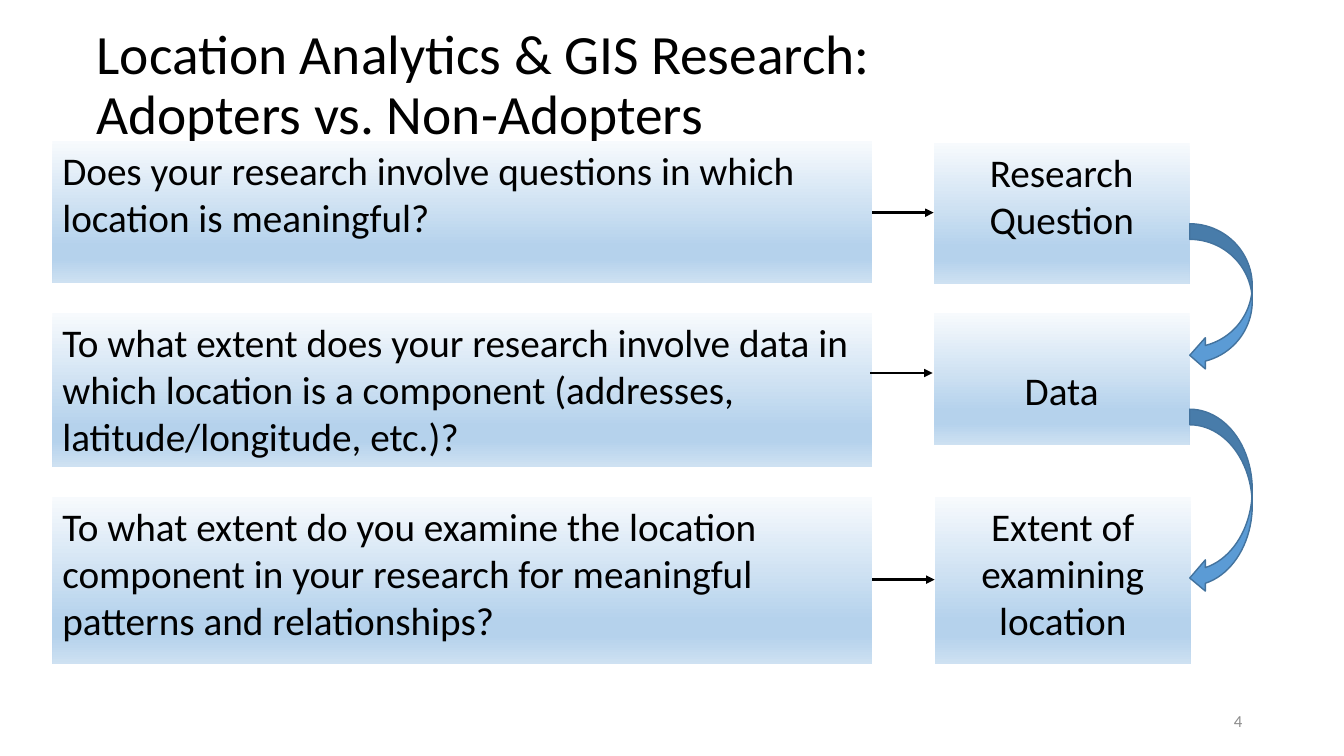
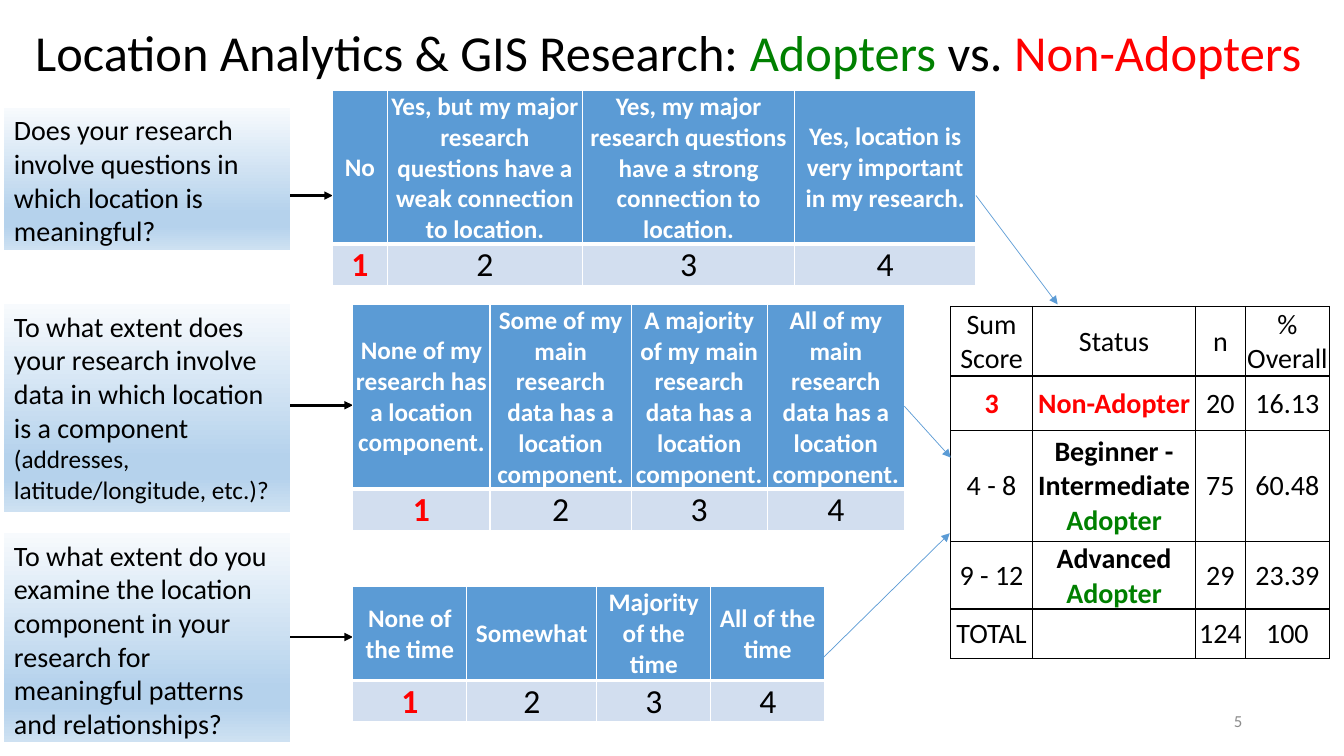
from lxml.etree import SubElement
from pptx import Presentation
from pptx.dml.color import RGBColor
from pptx.enum.shapes import MSO_CONNECTOR, MSO_SHAPE
from pptx.enum.text import MSO_ANCHOR, PP_ALIGN
from pptx.oxml.ns import qn
from pptx.util import Inches, Pt

# Shared look
FONT = "Calibri"
BLACK, WHITE, RED, GREEN, GRAY = "000000", "FFFFFF", "FF0000", "008000", "8C8C8C"
BLUE, DARK_BLUE, PALE_BLUE = "5B9BD5", "43739E", "D2DEEF"
GRADIENT = [(0, "F7FAFD"), (74, "B5D2EC"), (83, "B5D2EC"), (100, "CEE1F2")]
BOX_INSETS = (0.1, 0.05, 0.1, 0.05)
CELL_INSETS = (0.01, 0.01, 0.01, 0)
LEFT, CENTER, RIGHT = PP_ALIGN.LEFT, PP_ALIGN.CENTER, PP_ALIGN.RIGHT
TOP, MIDDLE = MSO_ANCHOR.TOP, MSO_ANCHOR.MIDDLE

# Content: a text is a string, or a list of strings and (string, format) runs
LOCATION_QUESTION = "Does your research involve questions in which location is meaningful?"
DATA_QUESTION = "To what extent does your research involve data in which location is a component "
DATA_EXAMPLES = "(addresses, latitude/longitude, etc.)?"
EXTENT_QUESTION = ("To what extent do you examine the location component in your "
                   "research for meaningful patterns and relationships?")

# question, top, height; topic, left, top, height, top inset; arrow start x, end x, y
STEPS = [
    (LOCATION_QUESTION, 1.4, 1.41, "Research Question", 9.26, 1.42, 1.4, 0.05, 8.65, 9.26, 2.11),
    (DATA_QUESTION + DATA_EXAMPLES, 3.11, 1.52, "Data", 9.26, 3.11, 1.31, 0.52, 8.63, 9.25, 3.7),
    (EXTENT_QUESTION, 4.93, 1.66, "Extent of examining location", 9.27, 4.93, 1.66, 0.05,
     8.65, 9.27, 5.75),
]
CURVED_ARROWS = [(4.06, 1.83), (2.22, 1.46)]  # top, height

SCALES = [
    {"question": LOCATION_QUESTION, "box": (1.07, 1.41), "arrow_y": 1.94,
     "at": (3.3, 0.9), "columns": [0.54, 1.94, 2.1, 1.8], "rows": [1.52, 0.4],
     "answers": ["No",
                 "Yes, but my major research questions have a weak connection to location.",
                 "Yes, my major research questions have a strong connection to location.",
                 "Yes, location is very important in my research."],
     "result": ((9.68, 1.94), (10.49, 3.02))},
    {"question": [DATA_QUESTION, (DATA_EXAMPLES, {"size": 18})], "box": (3.02, 2.06),
     "arrow_y": 4.02,
     "at": (3.5, 3.02), "columns": [1.36, 1.4, 1.35, 1.36], "rows": [1.83, 0.39],
     "answers": ["None of my research has a location component.",
                 "Some of my main research data has a location component.",
                 "A majority of my main research data has a location component.",
                 "All of my main research data has a location component."],
     "result": ((8.97, 4.03), (9.43, 4.54))},
    {"question": EXTENT_QUESTION, "box": (5.29, 2.07), "arrow_y": 6.32,
     "at": (3.5, 5.82), "columns": [1.13, 1.29, 1.13, 1.13], "rows": [0.93, 0.39],
     "answers": ["None of the time", "Somewhat", "Majority of the time", "All of the time"],
     "result": ((8.17, 6.52), (9.42, 5.29))},
]

STRONG_RED = {"color": RED, "bold": True}
STRONG_GREEN = {"color": GREEN, "bold": True}
SCORE_COLUMNS = [0.81, 1.62, 0.49, 0.84]
SCORES = [
    ["Sum Score", "Status", "n", "% Overall"],
    [[("3", STRONG_RED)], [("Non-Adopter", STRONG_RED)], "20", "16.13"],
    ["4 - 8", [("Beginner - Intermediate ", {"bold": True}), ("Adopter", STRONG_GREEN)],
     "75", "60.48"],
    ["9 - 12", [("Advanced", {"bold": True}), (" Adopter", STRONG_GREEN)], "29", "23.39"],
]
TOTALS = [["TOTAL", "", "124", "100"]]


def rgb(value):
    return RGBColor.from_string(value)


def write(frame, *texts, size=20, color=BLACK, bold=False, align=LEFT, spacing=None):
    """Write one paragraph per text."""
    for index, text in enumerate(texts):
        paragraph = frame.add_paragraph() if index else frame.paragraphs[0]
        paragraph.alignment = align
        if spacing:
            paragraph.line_spacing = spacing
        for item in [text] if isinstance(text, str) else text:
            words, changes = (item, {}) if isinstance(item, str) else item
            style = {"size": size, "color": color, "bold": bold, **changes}
            run = paragraph.add_run()
            run.text = words
            run.font.name = FONT
            run.font.size = Pt(style["size"])
            run.font.bold = style["bold"]
            run.font.color.rgb = rgb(style["color"])


def set_frame(target, insets, anchor):
    """Set the margins and anchor of a text frame or a table cell."""
    sides = ("margin_left", "margin_top", "margin_right", "margin_bottom")
    for side, inset in zip(sides, insets):
        setattr(target, side, Inches(inset))
    target.vertical_anchor = anchor


def add_label(slide, box, *texts, **style):
    frame = slide.shapes.add_textbox(*map(Inches, box)).text_frame
    frame.word_wrap = True
    set_frame(frame, BOX_INSETS, MIDDLE)
    write(frame, *texts, **style)


def add_title(slide, box, *lines, size):
    add_label(slide, box, *lines, size=size, spacing=0.9)


def add_page_number(slide, number):
    add_label(slide, (9.42, 6.95, 3, 0.4), str(number), size=12, color=GRAY, align=RIGHT)


def add_gradient_box(slide, box, text, top_inset=0.05, **style):
    shape = slide.shapes.add_shape(MSO_SHAPE.RECTANGLE, *map(Inches, box))
    shape.shadow.inherit = False
    shape.line.fill.background()
    shape.fill.gradient()
    shape.fill.gradient_angle = 270
    stops = next(shape.element.iter(qn("a:gsLst")))
    for stop in list(stops):
        stops.remove(stop)
    for position, color in GRADIENT:
        stop = SubElement(stops, qn("a:gs"), pos=str(position * 1000))
        SubElement(stop, qn("a:srgbClr"), val=color)
    frame = shape.text_frame
    frame.word_wrap = True
    set_frame(frame, (0.1, top_inset, 0.1, 0.05), TOP)
    write(frame, text, **style)


def add_arrow(slide, start, end, color=BLACK, width=2):
    connector = slide.shapes.add_connector(
        MSO_CONNECTOR.STRAIGHT, *map(Inches, (*start, *end)))
    connector.line.color.rgb = rgb(color)
    connector.line.width = Pt(width)
    SubElement(connector.line._get_or_add_ln(), qn("a:tailEnd"), type="triangle")
    SubElement(connector.element.spPr, qn("a:effectLst"))


def add_borders(cell, color, bottom=1, top=1):
    properties = cell._tc.get_or_add_tcPr()
    for side, width in (("L", 1), ("R", 1), ("T", top), ("B", bottom)):
        line = SubElement(properties, qn("a:ln" + side), w=str(Pt(width)))
        fill = SubElement(line, qn("a:solidFill"))
        SubElement(fill, qn("a:srgbClr"), val=color)


def add_grid(slide, at, columns, rows):
    """Add an unstyled table with the given column widths and row heights."""
    table = slide.shapes.add_table(
        len(rows), len(columns), *map(Inches, (*at, sum(columns), sum(rows)))).table
    table.first_row = table.horz_banding = False
    for column, width in zip(table.columns, columns):
        column.width = Inches(width)
    for row, height in zip(table.rows, rows):
        row.height = Inches(height)
    for cell in table.iter_cells():
        set_frame(cell, CELL_INSETS, MIDDLE)
    return table


def add_scale_table(slide, scale):
    table = add_grid(slide, scale["at"], scale["columns"], scale["rows"])
    for index, answer in enumerate(scale["answers"]):
        header, score = table.cell(0, index), table.cell(1, index)
        add_borders(header, WHITE, bottom=3)
        add_borders(score, WHITE, top=3)
        for cell, color in ((header, BLUE), (score, PALE_BLUE)):
            cell.fill.solid()
            cell.fill.fore_color.rgb = rgb(color)
        write(header.text_frame, answer, size=18, color=WHITE, bold=True, align=CENTER)
        lowest = index == 0
        write(score.text_frame, str(index + 1), size=24, bold=lowest,
              color=RED if lowest else BLACK, align=CENTER)


def add_score_table(slide, top, rows, heights):
    table = add_grid(slide, (9.43, top), SCORE_COLUMNS, heights)
    for row_index, row in enumerate(rows):
        for column_index, text in enumerate(row):
            cell = table.cell(row_index, column_index)
            add_borders(cell, BLACK)
            cell.fill.background()
            if text:
                write(cell.text_frame, text, align=CENTER)


def build_steps(slide):
    add_title(slide, (0.86, 0.2, 11.56, 1.31),
              "Location Analytics & GIS Research:", "Adopters vs. Non-Adopters", size=39.6)
    for (question, top, height, topic, topic_left, topic_top, topic_height, inset,
         start, end, arrow_y) in STEPS:
        add_gradient_box(slide, (0.52, top, 8.13, height), question, size=28)
        add_gradient_box(slide, (topic_left, topic_top, 2.54, topic_height), topic,
                         top_inset=inset, size=28, align=CENTER)
        add_arrow(slide, (start, arrow_y), (end, arrow_y))
    for top, height in CURVED_ARROWS:
        shape = slide.shapes.add_shape(
            MSO_SHAPE.CURVED_LEFT_ARROW, *map(Inches, (11.8, top, 0.62, height)))
        shape.shadow.inherit = False
        shape.fill.solid()
        shape.fill.fore_color.rgb = rgb(BLUE)
        shape.line.color.rgb = rgb(DARK_BLUE)
        shape.line.width = Pt(1)
    add_page_number(slide, 4)


def build_scores(slide):
    add_title(slide, (0.25, 0.2, 12.96, 0.7),
              ["Location Analytics & GIS Research: ", ("Adopters", {"color": GREEN}),
               " vs. ", ("Non-Adopters", {"color": RED})], size=36)
    # Questions, answer scales and the arrows between them
    for scale in SCALES:
        top, height = scale["box"]
        add_gradient_box(slide, (0.04, top, 2.84, height), scale["question"])
        add_arrow(slide, (2.88, scale["arrow_y"]), (scale["at"][0], scale["arrow_y"]))
        add_scale_table(slide, scale)
    # Summed scores
    add_score_table(slide, 3.04, SCORES, [0.69, 0.54, 1.1, 0.66])
    add_score_table(slide, 6.04, TOTALS, [0.49])
    for scale in SCALES:
        add_arrow(slide, *scale["result"], color=BLUE, width=0.5)
    add_page_number(slide, 5)


def main():
    presentation = Presentation()
    presentation.slide_width, presentation.slide_height = Inches(13.33), Inches(7.5)
    for build in (build_steps, build_scores):
        build(presentation.slides.add_slide(presentation.slide_layouts[6]))
    presentation.save("out.pptx")


if __name__ == "__main__":
    main()
